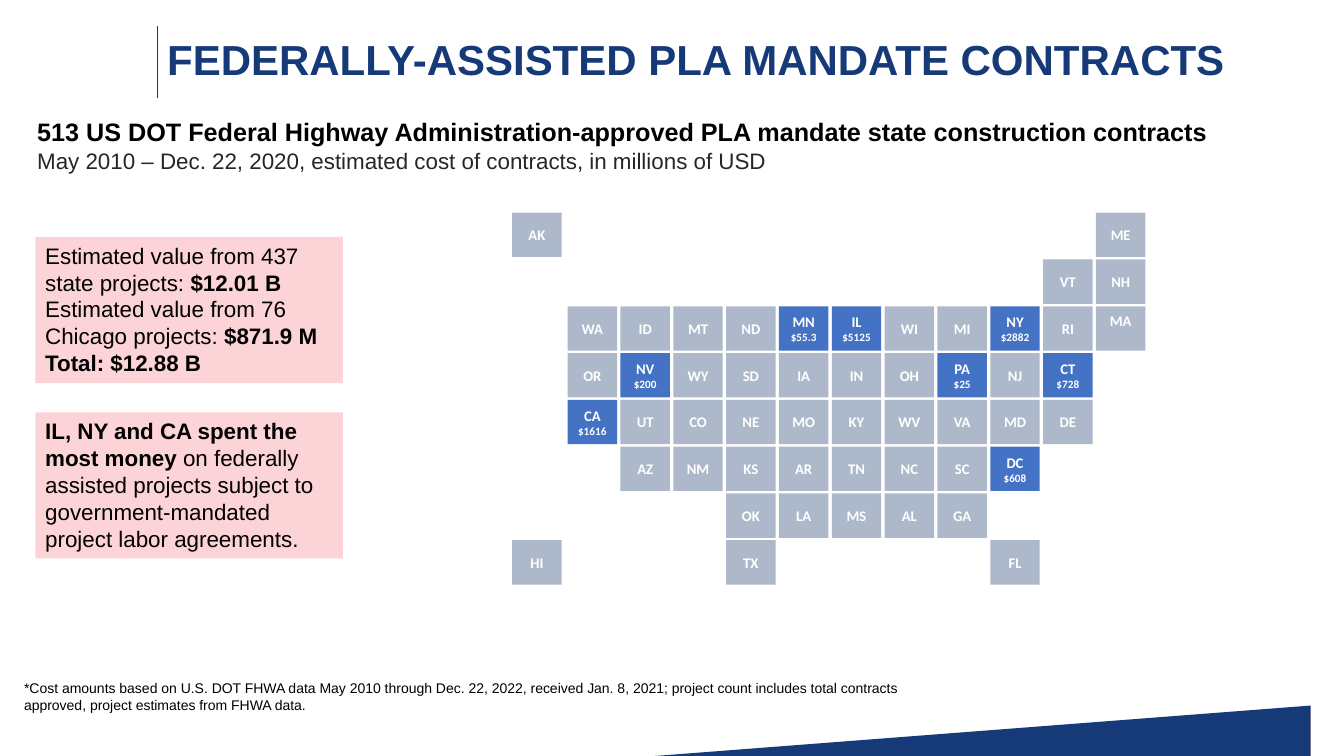
from pptx import Presentation
from pptx.dml.color import RGBColor
from pptx.enum.shapes import MSO_CONNECTOR, MSO_SHAPE
from pptx.enum.text import MSO_ANCHOR, PP_ALIGN
from pptx.oxml.ns import qn
from pptx.util import Inches, Pt
from lxml import etree

RECT, STRAIGHT = MSO_SHAPE.RECTANGLE, MSO_CONNECTOR.STRAIGHT
TOP, MIDDLE = MSO_ANCHOR.TOP, MSO_ANCHOR.MIDDLE
LEFT, CENTER = PP_ALIGN.LEFT, PP_ALIGN.CENTER

NAVY, RED, PINK = "163A78", "EE293C", "FCD4D8"
BLACK, CHARCOAL, WHITE = "000000", "262626", "FFFFFF"
STATE_GRAY, SPENDER_BLUE = "ADB9CA", "4472C4"

# Content: a paragraph is a list of (text, size, bold, colour) runs
title = [[("FEDERALLY-ASSISTED PLA MANDATE CONTRACTS", 30, True, NAVY)]]
heading = [
    [("513 US DOT Federal Highway Administration-approved PLA mandate state "
      "construction contracts", 18, True, BLACK)],
    [("May 2010 – Dec. 22, 2020, estimated cost of contracts, in millions of USD",
      16, False, CHARCOAL)],
]
footnote = [[("*Cost amounts based on U.S. DOT FHWA data May 2010 through Dec. 22, 2022, "
              "received Jan. 8, 2021; project count includes total contracts approved, "
              "project estimates from FHWA data.", 10, False, BLACK)]]
estimates = [
    [("Estimated value from 437 state projects: ", 16, False, BLACK),
     ("$12.01 B", 16, True, BLACK)],
    [("Estimated value from 76 Chicago projects: ", 16, False, BLACK),
     ("$871.9 M", 16, True, BLACK)],
    [("Total: $12.88 B", 16, True, BLACK)],
]
top_spenders = [
    [("IL, NY and CA spent the most money ", 16, True, BLACK),
     ("on federally assisted projects subject to government-mandated project labor "
      "agreements.", 16, False, BLACK)],
]

# Tile map, west to east and north to south; "--" leaves a gap
state_rows = [
    "AK -- -- -- -- -- -- -- -- -- -- ME",
    "-- -- -- -- -- -- -- -- -- -- VT NH",
    "-- WA ID MT ND MN IL WI MI NY RI MA",
    "-- OR NV WY SD IA IN OH PA NJ CT --",
    "-- CA UT CO NE MO KY WV VA MD DE --",
    "-- -- AZ NM KS AR TN NC SC DC -- --",
    "-- -- -- -- OK LA MS AL GA -- -- --",
    "HI -- -- -- TX -- -- -- -- FL -- --",
]
spending = {"NV": "$200", "CA": "$1616", "MN": "$55.3", "IL": "$5125", "PA": "$25",
            "NY": "$2882", "CT": "$728", "DC": "$608"}
OFFSHORE_LEFT = 5.08
MAP_LEFT, MAP_RIGHT = 5.63, 10.87
MAP_TOP, MAP_BOTTOM = 2.11, 5.36
TILE_W, TILE_H = 0.49, 0.44

# Decoration in slide inches
wedges = [
    (NAVY, [(0, 7.5), (12.94, 6.93), (13.33, 7.5)]),
    (RED, [(12.97, 6.93), (13.33, 6.95), (13.33, 7.5)]),
]

prs = Presentation()
prs.slide_width, prs.slide_height = Inches(13.33), Inches(7.5)
slide = prs.slides.add_slide(prs.slide_layouts[6])
shapes = slide.shapes


def color(hex_value):
    return RGBColor.from_string(hex_value)


def paint(shape, fill):
    shape.shadow.inherit = False
    shape.fill.solid()
    shape.fill.fore_color.rgb = color(fill)
    shape.line.fill.background()


def add_text(paragraphs, left, top, width, height, fill=None, font="Arial", align=LEFT,
             anchor=TOP, spacing=None, side=0.1, bottom=0.05):
    box = (Inches(left), Inches(top), Inches(width), Inches(height))
    if fill:
        shape = shapes.add_shape(RECT, *box)
        paint(shape, fill)
    else:
        shape = shapes.add_textbox(*box)
    frame = shape.text_frame
    frame.word_wrap = True
    frame.vertical_anchor = anchor
    frame.margin_left = frame.margin_right = Inches(side)
    frame.margin_top, frame.margin_bottom = Inches(0.05), Inches(bottom)
    for i, runs in enumerate(paragraphs):
        paragraph = frame.add_paragraph() if i else frame.paragraphs[0]
        paragraph.alignment = align
        if spacing:
            paragraph.line_spacing = spacing
        for text, size, bold, ink in runs:
            run = paragraph.add_run()
            run.text = text
            run.font.name, run.font.size, run.font.bold = font, Pt(size), bold
            run.font.color.rgb = color(ink)


# Title rule and corner wedges
title_rule = shapes.add_connector(STRAIGHT, Inches(1.56), Inches(0.26),
                                  Inches(1.56), Inches(0.97))
title_rule.line.color.rgb = color(NAVY)
title_rule.line.width = Pt(0.5)
etree.SubElement(title_rule._element.spPr, qn("a:effectLst"))
for fill, (start, *rest) in wedges:
    outline = shapes.build_freeform(*start, scale=Inches(1))
    outline.add_line_segments(rest, close=True)
    paint(outline.convert_to_shape(), fill)

# Title, heading, footnote and callouts
add_text(title, 1.56, 0.27, 11.18, 0.68, anchor=MIDDLE, spacing=0.9)
add_text(heading, 0.27, 1.11, 12.48, 0.67)
add_text(footnote, 0.14, 6.69, 8.95, 0.44)
add_text(top_spenders, 0.35, 4.09, 3.05, 1.45, fill=PINK)
add_text(estimates, 0.35, 2.35, 3.05, 1.45, fill=PINK)

# State tiles
column_step = (MAP_RIGHT - MAP_LEFT) / 10
row_step = (MAP_BOTTOM - MAP_TOP) / (len(state_rows) - 1)
for row, states in enumerate(state_rows):
    for column, state in enumerate(states.split()):
        if state == "--":
            continue
        left = MAP_LEFT + (column - 1) * column_step if column else OFFSHORE_LEFT
        label = [[(state, 10.5, True, WHITE)]]
        if state in spending:
            label.append([(spending[state], 8, True, WHITE)])
        add_text(label, left, MAP_TOP + row * row_step, TILE_W, TILE_H,
                 fill=SPENDER_BLUE if state in spending else STATE_GRAY,
                 font="Calibri", align=CENTER, anchor=MIDDLE, side=0,
                 bottom=0.21 if state == "MA" else 0.05)

prs.save("out.pptx")
